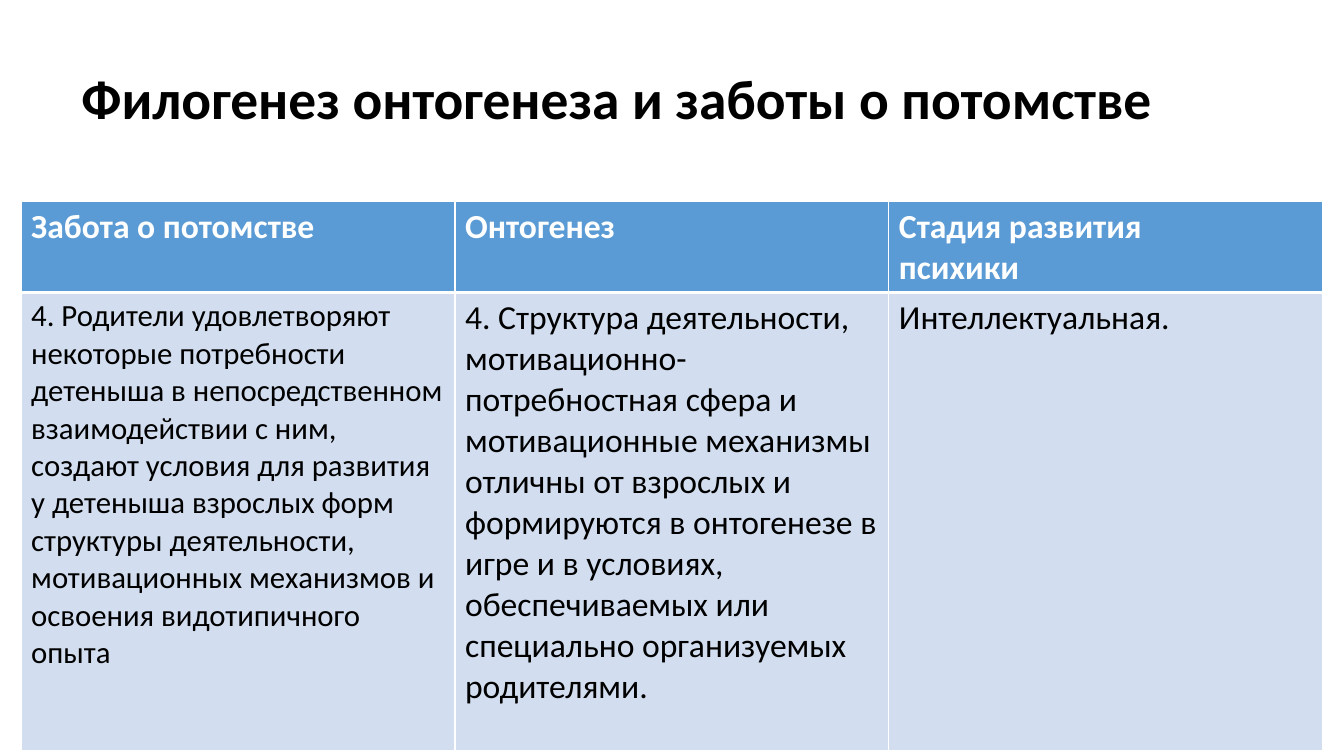
from lxml.etree import SubElement
from pptx import Presentation
from pptx.dml.color import RGBColor
from pptx.enum.text import MSO_ANCHOR
from pptx.oxml.ns import qn
from pptx.util import Inches, Pt

BLACK = RGBColor(0x00, 0x00, 0x00)
WHITE = RGBColor(0xFF, 0xFF, 0xFF)
HEADER_BLUE = RGBColor(0x5B, 0x9B, 0xD5)
BODY_BLUE = RGBColor(0xD2, 0xDE, 0xEF)

HEADER_FORMAT = {"name": "Calibri", "size": Pt(24), "bold": True}
BODY_FORMAT = {"name": "Calibri", "size": Pt(24), "bold": False}
TITLE_FORMAT = {"name": "Calibri", "size": Pt(39.6), "bold": True}

HEADERS = ["Забота о потомстве", "Онтогенез", "Стадия развития\nпсихики"]
BODY = [
    "4. Родители удовлетворяют некоторые потребности детеныша в "
    "непосредственном взаимодействии с ним, создают условия для развития "
    "у детеныша взрослых форм структуры деятельности, мотивационных "
    "механизмов и освоения видотипичного опыта",
    "4. Структура деятельности, мотивационно-потребностная сфера и "
    "мотивационные механизмы отличны от взрослых и формируются в онтогенезе "
    "в игре и в условиях, обеспечиваемых или специально организуемых "
    "родителями.",
    "Интеллектуальная.",
]


def write_text(text_frame, text, text_format, color):
    text_frame.text = text
    for paragraph in text_frame.paragraphs:
        for run in paragraph.runs:
            for name, value in text_format.items():
                setattr(run.font, name, value)
            run.font.color.rgb = color


def add_borders(cell, widths):
    """Draw white cell borders; widths maps L, R, T, B to points."""
    properties = cell._tc.get_or_add_tcPr()
    for side, width in widths.items():
        line = SubElement(properties, qn(f"a:ln{side}"), w=str(Pt(width)))
        fill = SubElement(line, qn("a:solidFill"))
        SubElement(fill, qn("a:srgbClr"), val=str(WHITE))


presentation = Presentation()
presentation.slide_width = Inches(13.33)
presentation.slide_height = Inches(7.5)
slide = presentation.slides.add_slide(presentation.slide_layouts[6])

title = slide.shapes.add_textbox(Inches(0.71), Inches(0.28), Inches(11.5), Inches(1.45))
title.text_frame.word_wrap = True
title.text_frame.vertical_anchor = MSO_ANCHOR.MIDDLE
write_text(title.text_frame, "Филогенез онтогенеза и заботы о потомстве", TITLE_FORMAT, BLACK)
title.text_frame.paragraphs[0].line_spacing = 0.9

table = slide.shapes.add_table(
    2, 3, Inches(0.21), Inches(2), Inches(12.91), Inches(5.45)
).table
table.rows[0].height = Inches(0.9)
table.rows[1].height = Inches(4.55)

rows = [
    (HEADERS, HEADER_FORMAT, WHITE, HEADER_BLUE, {"L": 1, "R": 1, "T": 1, "B": 3}),
    (BODY, BODY_FORMAT, BLACK, BODY_BLUE, {"L": 1, "R": 1, "T": 3, "B": 1}),
]
for row, (texts, text_format, text_color, fill_color, borders) in enumerate(rows):
    for column, text in enumerate(texts):
        cell = table.cell(row, column)
        write_text(cell.text_frame, text, text_format, text_color)
        add_borders(cell, borders)
        cell.fill.solid()
        cell.fill.fore_color.rgb = fill_color

# The longest text is set slightly smaller than its neighbours.
table.cell(1, 0).text_frame.paragraphs[0].runs[0].font.size = Pt(22)

presentation.save("out.pptx")
